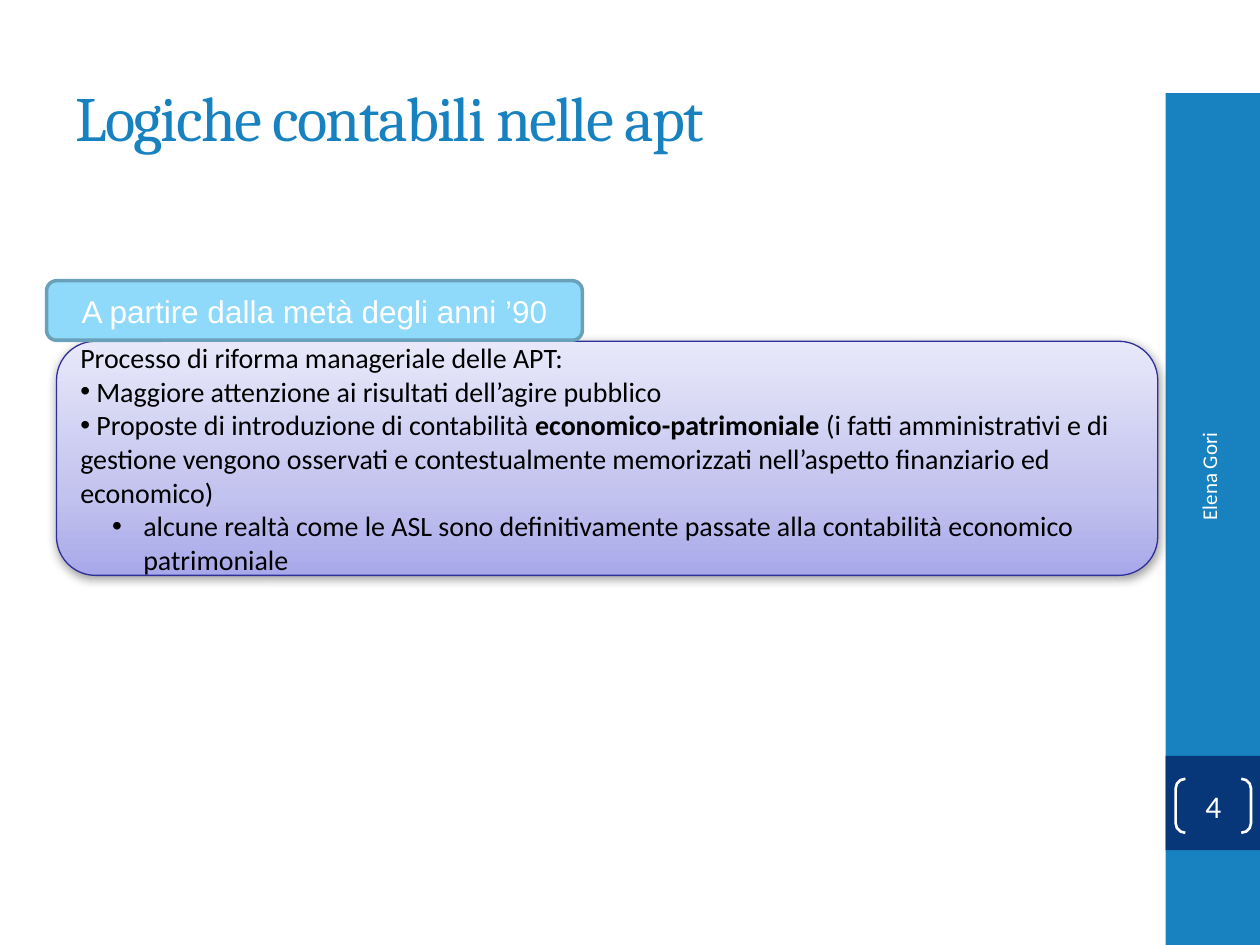
from lxml import etree
from pptx import Presentation
from pptx.dml.color import RGBColor
from pptx.enum.shapes import MSO_SHAPE
from pptx.enum.text import MSO_ANCHOR, PP_ALIGN
from pptx.oxml.ns import qn
from pptx.util import Cm, Pt

RECTANGLE = MSO_SHAPE.RECTANGLE
ROUNDED = MSO_SHAPE.ROUNDED_RECTANGLE
BRACKETS = MSO_SHAPE.DOUBLE_BRACKET
MIDDLE = MSO_ANCHOR.MIDDLE
LEFT, CENTER, RIGHT = PP_ALIGN.LEFT, PP_ALIGN.CENTER, PP_ALIGN.RIGHT

BLUE = RGBColor(0x17, 0x82, 0xBF)
NAVY = RGBColor(0x07, 0x37, 0x79)
SKY = RGBColor(0x8F, 0xD9, 0xFB)
SKY_EDGE = RGBColor(0x6A, 0xA1, 0xBA)
INDIGO = RGBColor(0x2F, 0x2F, 0x98)
LILAC = RGBColor(0xA8, 0xA8, 0xEA)
LILAC_MID = RGBColor(0xC3, 0xC3, 0xEF)
LILAC_PALE = RGBColor(0xE8, 0xE8, 0xFA)
WHITE = RGBColor(0xFF, 0xFF, 0xFF)
BLACK = RGBColor(0, 0, 0)

REFORM_POINTS = [
    (0, [("Processo di riforma manageriale delle APT:", False)]),
    (1, [(" Maggiore attenzione ai risultati dell’agire pubblico", False)]),
    (1, [(" Proposte di introduzione di contabilità ", False),
         ("economico-patrimoniale", True),
         (" (i fatti amministrativi e di gestione vengono osservati e "
          "contestualmente memorizzati nell’aspetto finanziario ed economico)", False)]),
    (2, [("alcune realtà come le ASL sono definitivamente passate alla "
          "contabilità economico patrimoniale", False)]),
]


def add_shape(slide, kind, box, fill=None, edge=None, width=1):
    shape = slide.shapes.add_shape(kind, *map(Cm, box))
    shape.shadow.inherit = False
    if fill is None:
        shape.fill.background()
    else:
        shape.fill.solid()
        shape.fill.fore_color.rgb = fill
    if edge is None:
        shape.line.fill.background()
    else:
        shape.line.color.rgb = edge
        shape.line.width = Pt(width)
    return shape


def style(paragraph, font, size, color, align=LEFT):
    paragraph.alignment = align
    paragraph.font.name = font
    paragraph.font.size = Pt(size)
    paragraph.font.color.rgb = color


def write_line(shape, text, font, size, color, align=LEFT):
    frame = shape.text_frame
    frame.word_wrap = True
    frame.vertical_anchor = MIDDLE
    paragraph = frame.paragraphs[0]
    run = paragraph.add_run()
    run.text = text
    style(paragraph, font, size, color, align)
    return run


def add_label(slide, box, *text_style):
    label = slide.shapes.add_textbox(*map(Cm, box))
    return label, write_line(label, *text_style)


def add_color(parent, color):
    return etree.SubElement(parent, qn("a:srgbClr"), val=str(color))


def shade(shape, stops):
    shape.fill.gradient()
    shape.fill.gradient_angle = 90
    stop_list = shape._element.spPr.find(".//" + qn("a:gsLst"))
    for stop in list(stop_list):
        stop_list.remove(stop)
    for percent, color in stops:
        stop = etree.SubElement(stop_list, qn("a:gs"), pos=str(percent * 1000))
        add_color(stop, color)


def cast_shadow(shape, blur, distance, opacity):
    effects = shape._element.spPr.find(qn("a:effectLst"))
    shadow = etree.SubElement(effects, qn("a:outerShdw"), blurRad=str(Pt(blur)),
                              dist=str(Pt(distance)), dir="5400000", rotWithShape="0")
    etree.SubElement(add_color(shadow, BLACK), qn("a:alpha"), val=str(opacity * 1000))


def add_bullet(paragraph, margin, indent):
    properties = paragraph._p.get_or_add_pPr()
    properties.set("marL", str(Cm(margin)))
    properties.set("indent", str(Cm(indent)))
    etree.SubElement(properties, qn("a:buFont"), typeface="Arial")
    etree.SubElement(properties, qn("a:buChar"), char="•")


def write_points(shape, points):
    frame = shape.text_frame
    frame.word_wrap = True
    frame.vertical_anchor = MIDDLE
    for index, (level, parts) in enumerate(points):
        paragraph = frame.paragraphs[0] if index == 0 else frame.add_paragraph()
        if level == 1:
            add_bullet(paragraph, 0, 0)
        elif level == 2:
            paragraph.level = 1
            add_bullet(paragraph, 1.27, -0.63)
        for text, bold in parts:
            run = paragraph.add_run()
            run.text = text
            if bold:
                run.font.bold = True
        style(paragraph, "Calibri", 16, BLACK)


def add_sidebar(slide):
    add_shape(slide, RECTANGLE, (23.5, 1.88, 1.9, 17.17), BLUE)
    add_shape(slide, RECTANGLE, (23.5, 15.24, 1.9, 1.9), NAVY)
    author, _ = add_label(slide, (21.08, 11.25, 6.58, 1.02),
                          "Elena Gori", "Calibri", 12, WHITE, RIGHT)
    author.rotation = 270
    number = add_shape(slide, BRACKETS, (23.7, 15.7, 1.52, 1.09), edge=WHITE, width=1.5)
    number.adjustments[0] = 0.18
    frame = number.text_frame
    frame.margin_left = frame.margin_right = frame.margin_top = frame.margin_bottom = 0
    write_line(number, "4", "Calibri", 18, WHITE, CENTER)


def add_reform(slide):
    panel = add_shape(slide, ROUNDED, (1.14, 6.88, 22.2, 4.72), LILAC, INDIGO, 0.75)
    shade(panel, [(0, LILAC), (35, LILAC_MID), (100, LILAC_PALE)])
    cast_shadow(panel, 5, 1.6, 38)
    write_points(panel, REFORM_POINTS)
    period = add_shape(slide, ROUNDED, (0.94, 5.66, 10.8, 1.2), SKY, SKY_EDGE, 2)
    write_line(period, "A partire dalla metà degli anni ’90", "Arial", 18, WHITE, CENTER)


def main():
    deck = Presentation()
    deck.slide_width, deck.slide_height = Cm(25.4), Cm(19.05)
    slide = deck.slides.add_slide(deck.slide_layouts[6])
    add_sidebar(slide)
    add_reform(slide)
    _, heading = add_label(slide, (1.27, 0.76, 21.16, 3.18),
                           "Logiche contabili nelle apt", "Cambria", 36, BLUE)
    heading._r.get_or_add_rPr().set("spc", "-100")
    deck.save("out.pptx")


if __name__ == "__main__":
    main()
